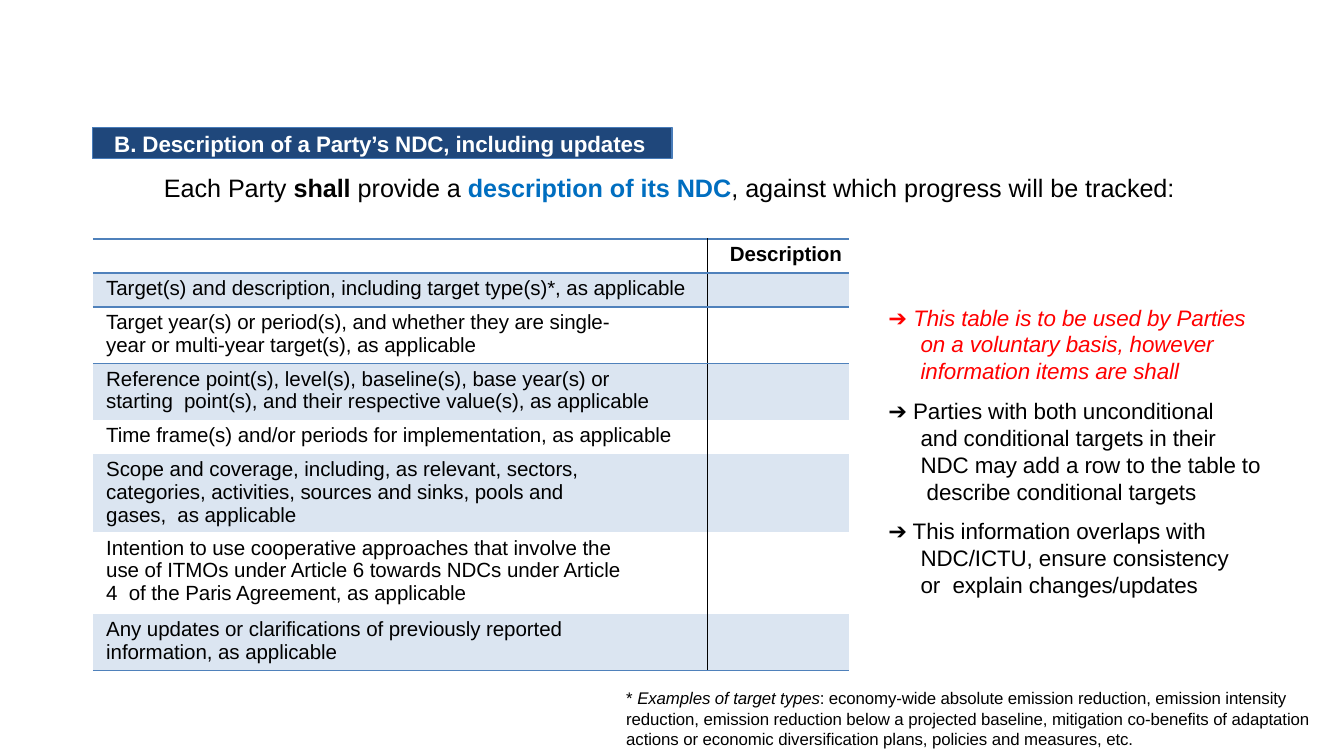
from lxml import etree
from pptx import Presentation
from pptx.dml.color import RGBColor
from pptx.enum import text
from pptx.oxml import ns
from pptx.util import Inches, Pt

COLORS = {"black": "000000", "white": "FFFFFF", "navy": "1F477B", "outline": "487CB9",
          "rule": "4F81BB", "band": "DBE5F1", "blue": "006EC0", "red": "FF0000"}
NO_TABLE_STYLE = "{2D5ABB26-0587-4C30-8999-92F81FD0307C}"


def write_paragraph(paragraph, runs, size, left, indent=0, before=0, right=0):
    """Fill a paragraph with (text, color, bold, italic) runs."""
    properties = paragraph._p.get_or_add_pPr()
    properties.set("marL", str(Inches(left)))
    properties.set("marR", str(Inches(right)))
    properties.set("indent", str(Inches(indent)))
    paragraph.alignment = text.PP_ALIGN.LEFT
    paragraph.space_before = Pt(before)
    for words, color, bold, italic in runs:
        run = paragraph.add_run()
        run.text = words
        run.font.name = "Arial"
        run.font.size = Pt(size)
        run.font.bold = bold
        run.font.italic = italic
        run.font.color.rgb = RGBColor.from_string(COLORS[color])
        if size <= 12:
            run._r.get_or_add_rPr().set("spc", "-5")


def prepare_frame(frame, top):
    frame.margin_left = frame.margin_right = frame.margin_bottom = 0
    frame.margin_top = Inches(top)
    frame.word_wrap = True
    frame.auto_size = text.MSO_AUTO_SIZE.NONE
    frame.vertical_anchor = text.MSO_ANCHOR.TOP


presentation = Presentation()
presentation.slide_width = Inches(10)
presentation.slide_height = Inches(10 * 9 / 16)
slide = presentation.slides.add_slide(presentation.slide_layouts[5])

# Section heading
title = slide.shapes.title
title.left, title.top, title.width, title.height = map(Inches, (0.69, 0.95, 4.31, 0.23))
title.fill.solid()
title.fill.fore_color.rgb = RGBColor.from_string(COLORS["navy"])
title.line.color.rgb = RGBColor.from_string(COLORS["outline"])
title.line.width = Pt(0.75)
prepare_frame(title.text_frame, 0.02)
write_paragraph(title.text_frame.paragraphs[0],
                [("B. Description of a Party’s NDC, including updates", "white", True, False)],
                12, 0.16)

# Introduction, footnote and side notes: place, size, left, indent, (right, runs) paragraphs
text_boxes = [
    ((1.21, 1.27, 7.55, 0.25), 13.5, 0.01, 0, [(0, [
        ("Each Party ", "black", False, False),
        ("shall ", "black", True, False),
        ("provide a ", "black", False, False),
        ("description of its NDC", "blue", True, False),
        (", against which progress will be tracked:", "black", False, False)])]),
    ((4.65, 5.11, 5.13, 0.48), 9, 0.01, 0, [(0, [
        ("* ", "black", False, False),
        ("Examples of target types", "black", False, True),
        (": economy-wide absolute emission reduction, emission intensity  reduction, "
         "emission reduction below a projected baseline, mitigation co-benefits of "
         "adaptation  actions or economic diversification plans, policies and measures, etc.",
         "black", False, False)])]),
    ((6.6, 2.25, 2.79, 2.22), 12, 0.25, -0.24, [
        (0, [("➔ ", "red", False, False),
             ("This table is to be used by Parties  on a voluntary basis, however  "
              "information items are shall", "red", False, True)]),
        (0, [("➔ Parties with both unconditional  and conditional targets in their  NDC "
              "may add a row to the table to  describe conditional targets",
              "black", False, False)]),
        (0.18, [("➔ This information overlaps with  NDC/ICTU, ensure consistency or  "
                 "explain changes/updates", "black", False, False)])]),
]
for place, size, left, indent, paragraphs in text_boxes:
    frame = slide.shapes.add_textbox(*map(Inches, place)).text_frame
    prepare_frame(frame, 0.01)
    for number, (right, runs) in enumerate(paragraphs):
        paragraph = frame.add_paragraph() if number else frame.paragraphs[0]
        write_paragraph(paragraph, runs, size, left, indent, 6.9 if number else 0, right)

# Table rows: height, right margin, paragraphs of the first cell
rows = [
    (0.25, 0, []),
    (0.25, 0, ["Target(s) and description, including target type(s)*, as applicable"]),
    (0.42, 0, ["Target year(s) or period(s), and whether they are single-",
               "year or multi-year target(s), as applicable"]),
    (0.42, 0.35, ["Reference point(s), level(s), baseline(s), base year(s) or starting  "
                  "point(s), and their respective value(s), as applicable"]),
    (0.25, 0, ["Time frame(s) and/or periods for implementation, as applicable"]),
    (0.58, 0.79, ["Scope and coverage, including, as relevant, sectors,  categories, "
                  "activities, sources and sinks, pools and gases,  as applicable"]),
    (0.6, 0.55, ["Intention to use cooperative approaches that involve the  use of ITMOs "
                 "under Article 6 towards NDCs under Article 4  of the Paris Agreement, "
                 "as applicable"]),
    (0.42, 0, ["Any updates or clarifications of previously reported",
               "information, as applicable"]),
]
table_height = 3.21
stretch = table_height / sum(height for height, _, _ in rows)
table = slide.shapes.add_table(len(rows), 2, Inches(0.69), Inches(1.78),
                               Inches(5.63), Inches(table_height)).table
table.first_row = table.horz_banding = False
table._tbl.tblPr.find(ns.qn("a:tableStyleId")).text = NO_TABLE_STYLE
table.columns[0].width = Inches(4.57)
table.columns[1].width = Inches(1.06)
ruled_below = {0, 1, len(rows) - 1}
for row, (height, margin, lines) in enumerate(rows):
    table.rows[row].height = Inches(height * stretch)
    for column in range(2):
        cell = table.cell(row, column)
        cell.margin_left = cell.margin_bottom = 0
        cell.margin_right = Inches(0 if column else margin)
        cell.margin_top = Inches(0.03)

        borders = [("lnL", "black", 0.25) if column else ("lnR", "black", 0.25)]
        if row == 0 or row - 1 in ruled_below:
            borders.append(("lnT", "rule", 1))
        if row in ruled_below:
            borders.append(("lnB", "rule", 1))
        for tag, color, width in borders:
            line = etree.SubElement(cell._tc.get_or_add_tcPr(), ns.qn(f"a:{tag}"),
                                    w=str(Pt(width)))
            fill = etree.SubElement(line, ns.qn("a:solidFill"))
            etree.SubElement(fill, ns.qn("a:srgbClr"), val=COLORS[color])
        if row % 2:
            cell.fill.solid()
            cell.fill.fore_color.rgb = RGBColor.from_string(COLORS["band"])
        else:
            cell.fill.background()

        heading = row == 0 and column == 1
        cell_lines = ["Description"] if heading else [] if column else lines
        for number, words in enumerate(cell_lines):
            frame = cell.text_frame
            paragraph = frame.add_paragraph() if number else frame.paragraphs[0]
            write_paragraph(paragraph, [(words, "black", heading, False)], 11,
                            0.17 if heading else 0.1)
        if not cell_lines:
            # Small text size keeps an empty cell from stretching its row
            etree.SubElement(cell.text_frame.paragraphs[0]._p, ns.qn("a:endParaRPr"), sz="1000")

presentation.save("out.pptx")
